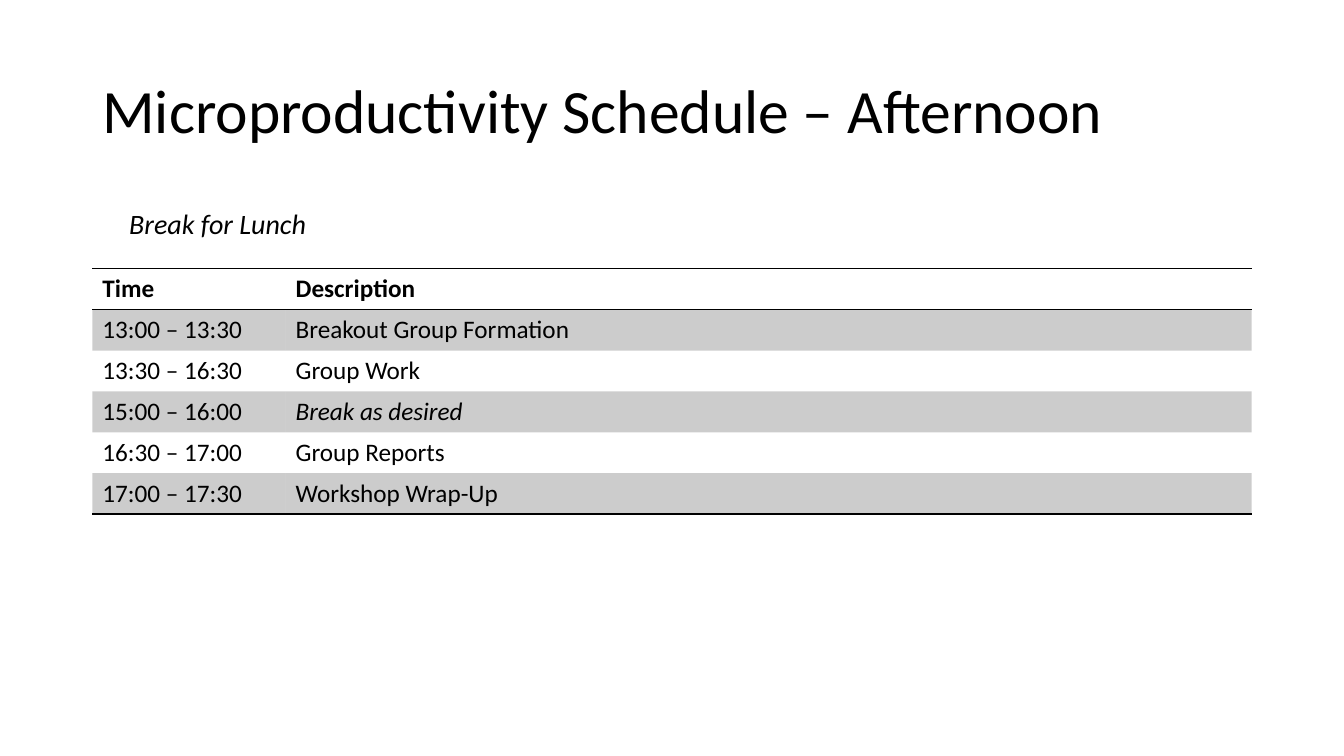
"""Build the afternoon schedule slide of the workshop."""
from dataclasses import dataclass

import pptx
import pptx.dml.color
import pptx.enum.text
import pptx.oxml
import pptx.oxml.ns
import pptx.oxml.xmlchemy
import pptx.util
from lxml import etree

BLACK = pptx.dml.color.RGBColor(0x00, 0x00, 0x00)
FONT = "Calibri"
SLIDE_WIDTH = pptx.util.Inches(13.333)
SLIDE_HEIGHT = pptx.util.Inches(7.5)
GRID_COLUMNS = 160
GRID_ROWS = 90
TABLE_LEFT, TABLE_TOP = 11, 32
COLUMN_SPANS = (23, 115)
ROW_SPAN = 4.87
BAND_ALPHA = 20000
NO_STYLE_ID = "{2D5ABB26-0587-4C30-8999-92F81FD0307C}"


@dataclass(frozen=True)
class Label:
    text: str
    column: float
    row: float
    column_span: float
    row_span: float
    size: float
    italic: bool = False
    line_spacing: float = 1.0
    anchor: pptx.enum.text.MSO_ANCHOR = pptx.enum.text.MSO_ANCHOR.TOP


@dataclass(frozen=True)
class Session:
    time: str
    description: str
    bold: bool = False
    italic: bool = False


LABELS = (
    Label("Microproductivity Schedule – Afternoon", 11, 4.8, 138, 17.4, 44,
          line_spacing=0.9, anchor=pptx.enum.text.MSO_ANCHOR.MIDDLE),
    Label("Break for Lunch", 14.2, 24, 38.3, 5.25, 20, italic=True),
)

SESSIONS = (
    Session("Time", "Description", bold=True),
    Session("13:00 – 13:30", "Breakout Group Formation"),
    Session("13:30 – 16:30", "Group Work"),
    Session("15:00 – 16:00", "Break as desired", italic=True),
    Session("16:30 – 17:00", "Group Reports"),
    Session("17:00 – 17:30", "Workshop Wrap-Up"),
)


def across(columns: float) -> int:
    """Turn grid columns into a length."""
    return round(SLIDE_WIDTH * columns / GRID_COLUMNS)


def down(rows: float) -> int:
    """Turn grid rows into a length."""
    return round(SLIDE_HEIGHT * rows / GRID_ROWS)


def add_run(paragraph, text: str, size: float, bold: bool = False, italic: bool = False) -> None:
    """Add one formatted run to a paragraph."""
    run = paragraph.add_run()
    run.text = text
    run.font.name = FONT
    run.font.size = pptx.util.Pt(size)
    run.font.bold = bold
    run.font.italic = italic
    run.font.color.rgb = BLACK


def add_label(slide, label: Label) -> None:
    """Draw a text box."""
    shape = slide.shapes.add_textbox(across(label.column), down(label.row),
                                     across(label.column_span), down(label.row_span))
    shape.text_frame.word_wrap = True
    shape.text_frame.vertical_anchor = label.anchor
    paragraph = shape.text_frame.paragraphs[0]
    paragraph.line_spacing = label.line_spacing
    add_run(paragraph, label.text, label.size, italic=label.italic)


def fill_cell(cell, banded: bool) -> None:
    """Give a cell a translucent band or no fill."""
    if not banded:
        cell.fill.background()
        return
    cell.fill.solid()
    cell.fill.fore_color.rgb = BLACK
    color = cell._tc.tcPr.find(".//" + pptx.oxml.ns.qn("a:srgbClr"))
    etree.SubElement(color, pptx.oxml.ns.qn("a:alpha"), val=str(BAND_ALPHA))


def add_borders(cell, sides: tuple[str, ...]) -> None:
    """Put thin black lines on the given sides of a cell."""
    for position, side in enumerate(sides):
        line = etree.Element(pptx.oxml.ns.qn(f"a:{side}"), w=str(pptx.util.Pt(1)))
        fill = etree.SubElement(line, pptx.oxml.ns.qn("a:solidFill"))
        etree.SubElement(fill, pptx.oxml.ns.qn("a:srgbClr"), val=str(BLACK))
        cell._tc.get_or_add_tcPr().insert(position, line)


def add_schedule(slide, sessions: tuple[Session, ...]) -> None:
    """Draw the schedule table."""
    frame = slide.shapes.add_table(
        len(sessions), len(COLUMN_SPANS), across(TABLE_LEFT), down(TABLE_TOP),
        across(sum(COLUMN_SPANS)), down(ROW_SPAN * len(sessions)))
    table = frame.table
    table.horz_banding = False
    table.first_row = True
    table._tbl.tblPr.find(pptx.oxml.ns.qn("a:tableStyleId")).text = NO_STYLE_ID
    for column, span in zip(table.columns, COLUMN_SPANS):
        column.width = across(span)
    borders = {0: ("lnT", "lnB"), len(sessions) - 1: ("lnB",)}
    for index, session in enumerate(sessions):
        table.rows[index].height = down(ROW_SPAN)
        texts = ((session.time, False), (session.description, session.italic))
        for cell, (text, italic) in zip(table.rows[index].cells, texts):
            add_run(cell.text_frame.paragraphs[0], text, 18, session.bold, italic)
            fill_cell(cell, banded=index % 2 == 1)
            add_borders(cell, borders.get(index, ()))


def main() -> None:
    """Build and save the presentation."""
    presentation = pptx.Presentation()
    presentation.slide_width = SLIDE_WIDTH
    presentation.slide_height = SLIDE_HEIGHT
    slide = presentation.slides.add_slide(presentation.slide_layouts[6])
    for label in LABELS:
        add_label(slide, label)
    add_schedule(slide, SESSIONS)
    presentation.save("out.pptx")


if __name__ == "__main__":
    main()
